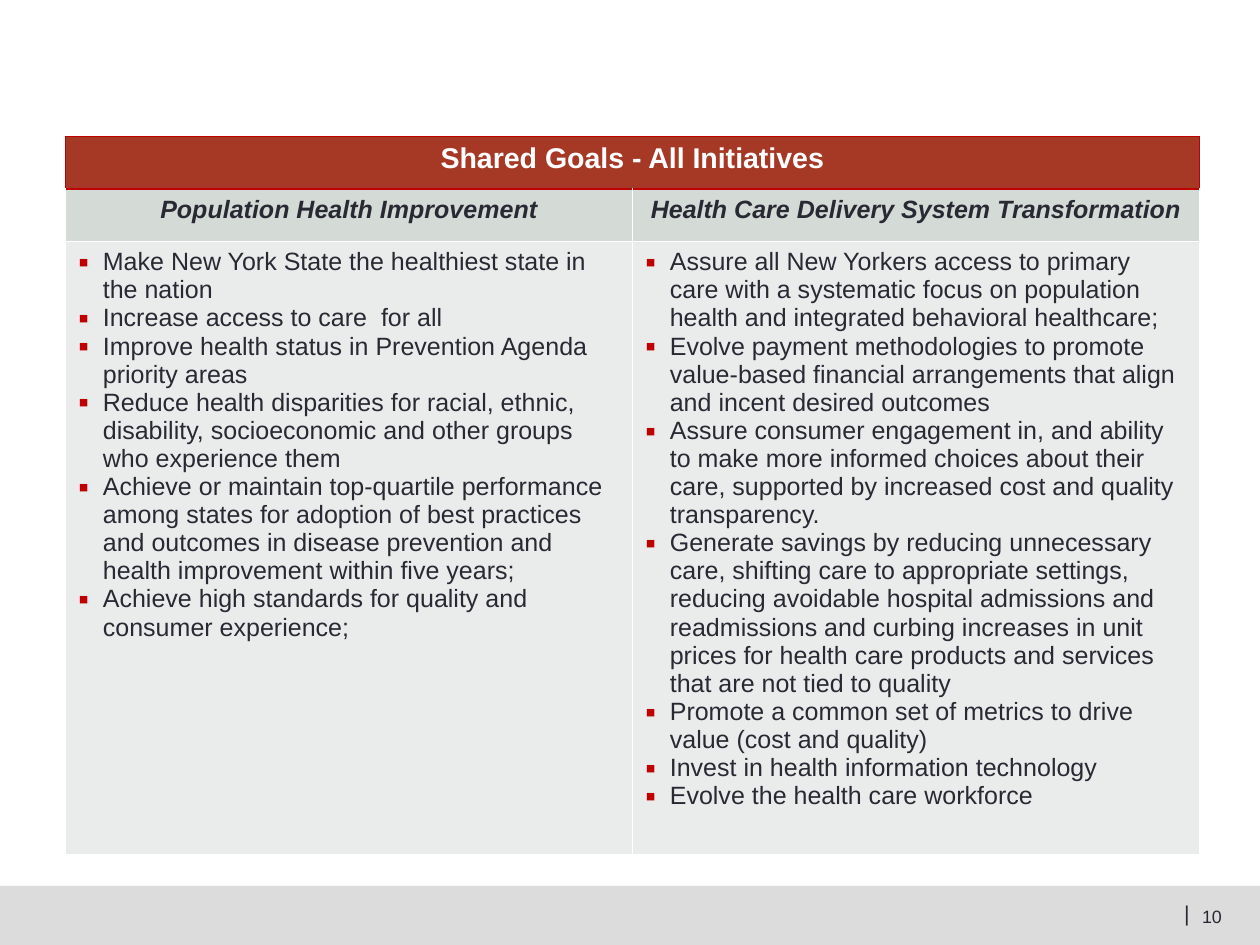
import pptx
import pptx.util
import pptx.dml.color
import pptx.enum.shapes
import pptx.enum.text
import pptx.oxml
import pptx.oxml.ns
from pptx.util import Inches

ALIGN = pptx.enum.text.PP_ALIGN
MIDDLE = pptx.enum.text.MSO_ANCHOR.MIDDLE
NS = pptx.oxml.ns.nsdecls("a")
INK, RED, WHITE = "292934", "C00000", "FFFFFF"


def rgb(color):
    return pptx.dml.color.RGBColor.from_string(color)


def write(tf, lines, size=14, color=INK, bold=False, italic=False,
          align=ALIGN.LEFT, bullet=False):
    for i, line in enumerate(lines):
        p = tf.paragraphs[0] if i == 0 else tf.add_paragraph()
        p.alignment = align
        if bullet:
            pPr = p._p.get_or_add_pPr()
            pPr.set("marL", str(Inches(0.19)))
            pPr.set("indent", str(Inches(-0.19)))
            for xml in (f'<a:buClr {NS}><a:srgbClr val="{RED}"/></a:buClr>',
                        f'<a:buSzPct {NS} val="120000"/>',
                        f'<a:buFont {NS} typeface="Arial"/>',
                        f'<a:buChar {NS} char="▪"/>'):
                pPr.append(pptx.oxml.parse_xml(xml))
        r = p.add_run()
        r.text = line
        r.font.name = "Arial"
        r.font.size = pptx.util.Pt(size)
        r.font.bold = bold
        r.font.italic = italic
        r.font.color.rgb = rgb(color)


title = "Shared Goals - All Initiatives"
headings = ["Population Health Improvement", "Health Care Delivery System Transformation"]
goals = [
    [
        "Make New York State the healthiest state in the nation",
        "Increase access to care  for all",
        "Improve health status in Prevention Agenda priority areas",
        "Reduce health disparities for racial, ethnic, disability, socioeconomic "
        "and other groups who experience them",
        "Achieve or maintain top-quartile performance among states for adoption of best "
        "practices and outcomes in disease prevention and health improvement within five years;",
        "Achieve high standards for quality and consumer experience;",
    ],
    [
        "Assure all New Yorkers access to primary care with a systematic focus on "
        "population health and integrated behavioral healthcare;",
        "Evolve payment methodologies to promote value-based financial arrangements "
        "that align and incent desired outcomes",
        "Assure consumer engagement in, and ability to make more informed choices about "
        "their care, supported by increased cost and quality transparency.",
        "Generate savings by reducing unnecessary care, shifting care to appropriate "
        "settings, reducing avoidable hospital admissions and readmissions and curbing "
        "increases in unit prices for health care products and services that are not "
        "tied to quality",
        "Promote a common set of metrics to drive value (cost and quality)",
        "Invest in health information technology",
        "Evolve the health care workforce",
    ],
]

prs = pptx.Presentation()
prs.slide_width, prs.slide_height = Inches(9.8), Inches(7.35)
slide = prs.slides.add_slide(prs.slide_layouts[6])

footer = slide.shapes.add_shape(pptx.enum.shapes.MSO_SHAPE.RECTANGLE,
                                0, Inches(6.89), Inches(9.8), Inches(0.46))
footer.shadow.inherit = False
footer.fill.solid()
footer.fill.fore_color.rgb = rgb("DCDCDC")
footer.line.fill.background()

for text, x, y, w, h, size, align in [
    ("|", 9.21, 7, 0.04, 0.2, 12, ALIGN.RIGHT),
    ("10", 9.35, 7.04, 0.23, 0.17, 10, ALIGN.LEFT),
]:
    tf = slide.shapes.add_textbox(Inches(x), Inches(y), Inches(w), Inches(h)).text_frame
    tf.margin_left = tf.margin_right = tf.margin_top = tf.margin_bottom = 0
    tf.word_wrap = False
    tf.vertical_anchor = MIDDLE
    write(tf, [text], size=size, align=align)

heights = [0.41, 0.41, 4.46]
table = slide.shapes.add_table(3, 2, Inches(0.51), Inches(1.06),
                               Inches(8.82), Inches(sum(heights))).table
table.horz_banding = False
for row, height in zip(table.rows, heights):
    row.height = Inches(height)
table.cell(0, 0).merge(table.cell(0, 1))

write(table.cell(0, 0).text_frame, [title], size=16, color=WHITE, bold=True,
      align=ALIGN.CENTER)
for col in range(2):
    write(table.cell(1, col).text_frame, [headings[col]], bold=True, italic=True,
          align=ALIGN.CENTER)
    write(table.cell(2, col).text_frame, goals[col], bullet=True)

for row, fill in enumerate(["A53926", "D4DAD6", "E9ECEB"]):
    for col in range(2):
        cell = table.cell(row, col)
        tcPr = cell._tc.get_or_add_tcPr()
        for side in "LRTB":
            line = RED if row == 0 or (row == 1 and side == "T") else WHITE
            tcPr.append(pptx.oxml.parse_xml(
                f'<a:ln{side} {NS} w="12700"><a:solidFill><a:srgbClr val="{line}"/>'
                f'</a:solidFill></a:ln{side}>'))
        cell.fill.solid()
        cell.fill.fore_color.rgb = rgb(fill)

prs.save("out.pptx")
